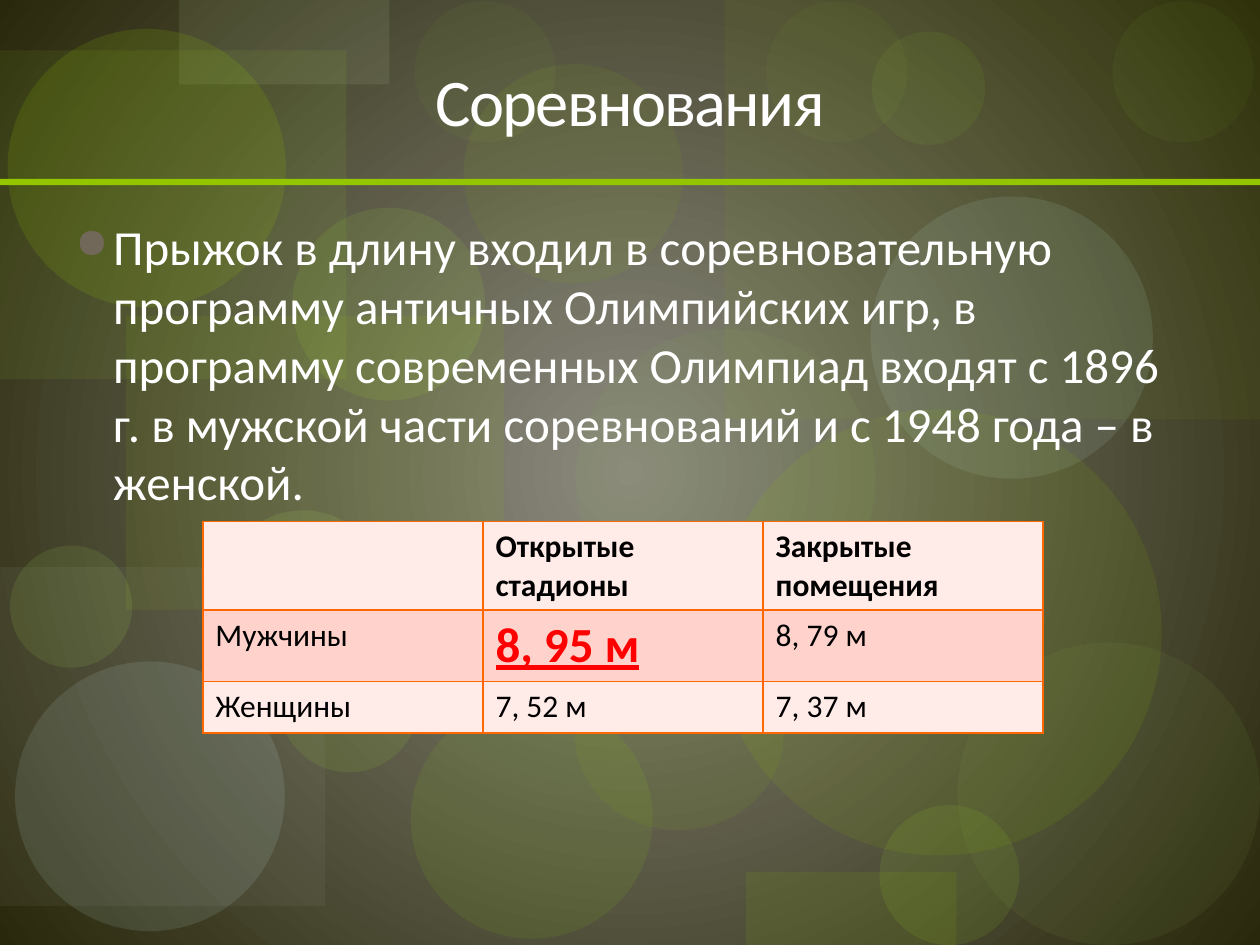
from typing import NamedTuple

from lxml.etree import SubElement
from pptx import Presentation
from pptx.dml.color import RGBColor
from pptx.enum.shapes import MSO_SHAPE
from pptx.enum.text import MSO_ANCHOR, PP_ALIGN
from pptx.oxml import parse_xml
from pptx.oxml.ns import nsdecls, qn
from pptx.util import Inches, Pt

FONT = "Calibri"
WHITE = RGBColor(0xFF, 0xFF, 0xFF)
BLACK = RGBColor(0, 0, 0)
RED = RGBColor(0xFF, 0, 0)
GLOW = RGBColor(0x8B, 0x8A, 0x7E)
DARK = RGBColor(0x29, 0x28, 0x0C)
GREEN = RGBColor(0x94, 0xC6, 0x00)
LEAF = RGBColor(0x7D, 0xB8, 0x1B)
MOSS = RGBColor(0x8C, 0xBA, 0x4C)
LIME = RGBColor(0xB0, 0xFF, 0x2B)
PALE_LIME = RGBColor(0xBD, 0xFB, 0x66)
SAGE = RGBColor(0xC8, 0xDF, 0xAB)
MINT = RGBColor(0xC1, 0xE8, 0xE4)
GREY = RGBColor(0xAF, 0xAF, 0xAD)
BULLET = RGBColor(0x71, 0x68, 0x5A)
ORANGE = RGBColor(0xFF, 0x67, 0x00)
PALE_PINK = RGBColor(0xFF, 0xEB, 0xE7)
PINK = RGBColor(0xFF, 0xD3, 0xCC)

RECT, OVAL = MSO_SHAPE.RECTANGLE, MSO_SHAPE.OVAL


class Patch(NamedTuple):
    kind: MSO_SHAPE
    left: float
    top: float
    width: float
    height: float
    color: RGBColor
    opacity: int = 100


PATCHES = [
    Patch(RECT, 1, 2.51, 3, 2.33, GREEN, 9),
    Patch(OVAL, 3.26, 5.55, 1.92, 1.9, LEAF, 13),
    Patch(RECT, 5.75, 0, 4.25, 3.33, GREEN, 6),
    Patch(RECT, 0, 4.5, 2.58, 2.69, GREY, 8),
    Patch(OVAL, 4.57, 2.61, 2.38, 2.38, MOSS, 8),
    Patch(OVAL, 6.98, 6.39, 1.11, 1.11, LIME, 9),
    Patch(OVAL, 6.91, 1.56, 2.24, 2.24, MINT, 11),
    Patch(OVAL, 0.12, 5.25, 2.14, 2.14, MINT, 12),
    Patch(OVAL, 2.21, 5.01, 1.12, 1.12, LIME, 9),
    Patch(OVAL, 4.56, 5.06, 1.66, 1.53, GREEN, 8),
    Patch(RECT, 0, 0.4, 2.75, 2.61, LIME, 7),
    Patch(RECT, 1.42, 0, 1.67, 0.67, SAGE, 10),
    Patch(OVAL, 0.06, 0.23, 2.21, 2.21, GREEN, 15),
    Patch(OVAL, 0.08, 4.33, 0.97, 0.97, PALE_LIME, 10),
    Patch(OVAL, 2.32, 1.65, 1.53, 1.53, LIME, 9),
    Patch(OVAL, 3.68, 0.51, 1.74, 1.74, GREEN, 8),
    Patch(OVAL, 5.68, 3.25, 3.54, 3.54, GREEN, 10),
    Patch(OVAL, 6.08, 0.01, 1.12, 1.12, LIME, 4),
    Patch(OVAL, 7.6, 5.1, 2.4, 2.4, MOSS, 8),
    Patch(OVAL, 1.75, 4.05, 1.31, 1.31, PALE_LIME, 10),
    Patch(OVAL, 6.92, 0.25, 0.9, 0.9, LIME, 6),
    Patch(OVAL, 8.83, 0.01, 1.12, 1.12, LIME, 4),
    Patch(RECT, 5.92, 6.92, 1.67, 0.58, GREEN, 10),
    Patch(OVAL, 3.29, 0.01, 1.12, 1.12, LIME, 4),
    Patch(RECT, 0, 1.42, 10, 0.05, GREEN),
]

TITLE = "Соревнования"
HISTORY = (
    "Прыжок в длину входил в соревновательную программу античных "
    "Олимпийских игр, в программу современных Олимпиад входят с 1896 г. "
    "в мужской части соревнований и с 1948 года – в женской."
)
RECORDS = [
    ["", "Открытые стадионы", "Закрытые помещения"],
    ["Мужчины", "8, 95 м", "8, 79 м"],
    ["Женщины", "7, 52 м", "7, 37 м"],
]
BEST_RECORD = (1, 1)


def paint_background(slide) -> None:
    """Fill the slide with a gradient that darkens outward from the centre."""
    fill = slide.background.fill
    fill.gradient()
    for stop, color, position in zip(fill.gradient_stops, (GLOW, DARK), (0, 1)):
        stop.color.rgb = color
        stop.position = position
    gradient = slide.background._cSld.find(".//" + qn("a:gradFill"))
    linear = gradient.find(qn("a:lin"))
    gradient.replace(linear, parse_xml(
        f'<a:path {nsdecls("a")} path="circle">'
        '<a:fillToRect l="50000" t="50000" r="50000" b="50000"/></a:path>'))


def draw_patch(slide, patch: Patch) -> None:
    box = map(Inches, (patch.left, patch.top, patch.width, patch.height))
    shape = slide.shapes.add_shape(patch.kind, *box)
    shape.shadow.inherit = False
    shape.line.fill.background()
    shape.fill.solid()
    shape.fill.fore_color.rgb = patch.color
    if patch.opacity < 100:
        color = shape._element.spPr.find(".//" + qn("a:srgbClr"))
        SubElement(color, qn("a:alpha"), val=str(patch.opacity * 1000))


def set_font(paragraph, size: float, color: RGBColor) -> None:
    paragraph.font.name = FONT
    paragraph.font.size = Pt(size)
    paragraph.font.color.rgb = color


def write_title(slide) -> None:
    title = slide.shapes.title
    title.left, title.top = Inches(0.5), Inches(0.17)
    title.width, title.height = Inches(9), Inches(1.25)
    title.text_frame.text = TITLE
    title.text_frame.vertical_anchor = MSO_ANCHOR.MIDDLE
    heading = title.text_frame.paragraphs[0]
    heading.alignment = PP_ALIGN.CENTER
    set_font(heading, 38, WHITE)
    heading.runs[0].font._element.set("spc", "-100")
    # The title lies in front of the background patches.
    slide.shapes._spTree.append(title._element)


def write_history(slide) -> None:
    body = slide.shapes.add_textbox(Inches(0.5), Inches(1.67), Inches(9), Inches(5))
    body.text_frame.word_wrap = True
    body.text_frame.text = HISTORY
    paragraph = body.text_frame.paragraphs[0]
    paragraph.space_before = Pt(7)
    set_font(paragraph, 28, WHITE)
    properties = paragraph._p.get_or_add_pPr()
    properties.set("marL", str(Inches(0.3)))
    properties.set("indent", str(Inches(-0.3)))
    bullet = [
        f'<a:buClr {nsdecls("a")}><a:srgbClr val="{BULLET}"/></a:buClr>',
        f'<a:buSzPct {nsdecls("a")} val="85000"/>',
        f'<a:buChar {nsdecls("a")} char="●"/>',
    ]
    position = list(properties).index(properties.find(qn("a:defRPr")))
    for offset, part in enumerate(bullet):
        properties.insert(position + offset, parse_xml(part))


def border_cell(cell) -> None:
    properties = cell._tc.get_or_add_tcPr()
    for index, side in enumerate(("lnL", "lnR", "lnT", "lnB")):
        properties.insert(index, parse_xml(
            f'<a:{side} {nsdecls("a")} w="{Pt(1)}"><a:solidFill>'
            f'<a:srgbClr val="{ORANGE}"/></a:solidFill></a:{side}>'))


def draw_records(slide) -> None:
    table = slide.shapes.add_table(
        len(RECORDS), len(RECORDS[0]),
        Inches(1.61), Inches(4.14), Inches(6.67), Inches(1.23)).table
    for row, texts in enumerate(RECORDS):
        for column, text in enumerate(texts):
            cell = table.cell(row, column)
            cell.fill.solid()
            cell.fill.fore_color.rgb = PINK if row % 2 else PALE_PINK
            border_cell(cell)
            cell.text = text
            paragraph = cell.text_frame.paragraphs[0]
            best = (row, column) == BEST_RECORD
            set_font(paragraph, 28 if best else 18, RED if best else BLACK)
            paragraph.font.bold = best or row == 0
            paragraph.font.underline = best


def main() -> None:
    presentation = Presentation()
    presentation.slide_width, presentation.slide_height = Inches(10), Inches(7.5)
    slide = presentation.slides.add_slide(presentation.slide_layouts[5])
    paint_background(slide)
    for patch in PATCHES:
        draw_patch(slide, patch)
    write_title(slide)
    write_history(slide)
    draw_records(slide)
    presentation.save("out.pptx")


if __name__ == "__main__":
    main()
